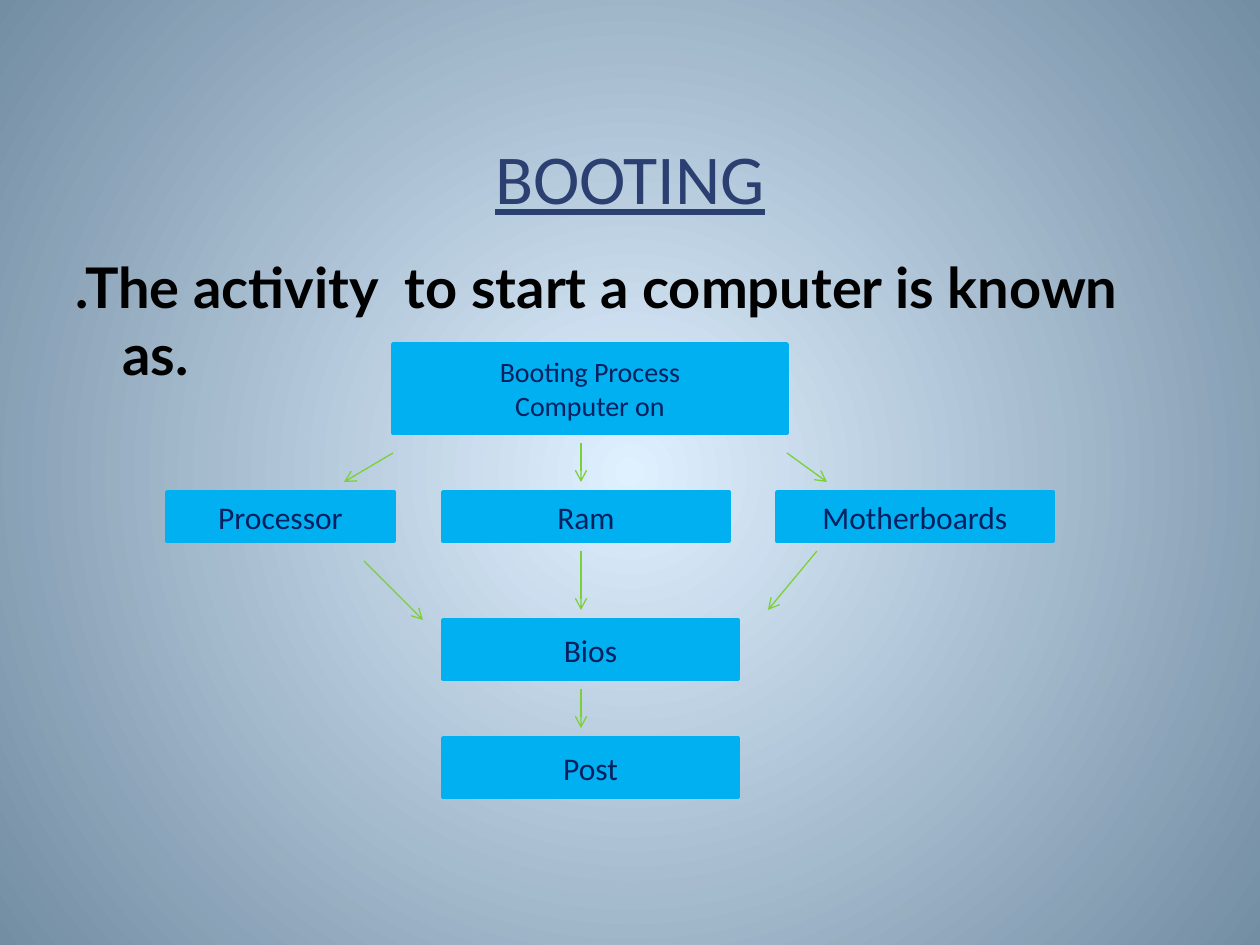
from lxml.etree import SubElement
from pptx import Presentation
from pptx.dml.color import RGBColor
from pptx.enum.shapes import MSO_CONNECTOR, MSO_SHAPE
from pptx.enum.text import MSO_ANCHOR, PP_ALIGN
from pptx.oxml import parse_xml
from pptx.oxml.ns import nsdecls, qn
from pptx.util import Emu, Pt

EMU_PER_PX = 914400 / 126
BOX_FILL = "00B0F0"
BOX_TEXT = "002060"
ARROW = "7CD036"
CENTER_X = 581


def px(length):
    return Emu(round(length * EMU_PER_PX))


def color(hex_string):
    return RGBColor.from_string(hex_string)


def place(shape, left, top, width, height):
    shape.left, shape.top = px(left), px(top)
    shape.width, shape.height = px(width), px(height)


def style(para, name, size, hex_string):
    para.font.name = name
    para.font.size = Pt(size)
    para.font.color.rgb = color(hex_string)


def set_background(page, inner, outer):
    page.background.fill.solid()
    properties = page.background._cSld.bg.bgPr
    gradient = parse_xml(
        f'<a:gradFill {nsdecls("a")} rotWithShape="1"><a:gsLst>'
        f'<a:gs pos="0"><a:srgbClr val="{inner}"/></a:gs>'
        f'<a:gs pos="100000"><a:srgbClr val="{outer}"/></a:gs></a:gsLst>'
        '<a:path path="circle">'
        '<a:fillToRect l="50000" t="50000" r="50000" b="50000"/>'
        '</a:path></a:gradFill>'
    )
    properties.replace(properties.find(qn("a:solidFill")), gradient)


def set_title(page, text):
    title = page.shapes.title
    place(title, 63, 108, 1134, 138)
    title.text_frame.vertical_anchor = MSO_ANCHOR.MIDDLE
    para = title.text_frame.paragraphs[0]
    para.text = text
    para.alignment = PP_ALIGN.CENTER
    style(para, "Calibri", 40, "2C3F71")
    para.font.underline = True


def set_body(page, text):
    body = page.placeholders[1]
    place(body, 63, 246, 1134, 598)
    para = body.text_frame.paragraphs[0]
    para.text = text
    style(para, "Lato", 32, "000000")
    para.font.bold = True
    properties = para._p.get_or_add_pPr()
    properties.set("marL", str(px(47)))
    properties.set("indent", str(-px(47)))
    properties.insert(0, parse_xml(f'<a:buNone {nsdecls("a")}/>'))


def add_box(page, lines, left, top, width, height, size=18):
    box = page.shapes.add_shape(
        MSO_SHAPE.RECTANGLE, px(left), px(top), px(width), px(height))
    box.shadow.inherit = False
    box.fill.solid()
    box.fill.fore_color.rgb = color(BOX_FILL)
    box.line.color.rgb = color(BOX_FILL)
    box.line.width = Pt(2)
    frame = box.text_frame
    frame.vertical_anchor = MSO_ANCHOR.MIDDLE
    frame.text = "\n".join(lines)
    for para in frame.paragraphs:
        para.alignment = PP_ALIGN.CENTER
        style(para, "Calibri", size, BOX_TEXT)


def add_arrow(page, start_x, start_y, end_x, end_y):
    arrow = page.shapes.add_connector(
        MSO_CONNECTOR.STRAIGHT, px(start_x), px(start_y), px(end_x), px(end_y))
    arrow.line.color.rgb = color(ARROW)
    arrow.line.width = Pt(0.75)
    SubElement(arrow.line._get_or_add_ln(), qn("a:tailEnd"), type="arrow")
    SubElement(arrow._element.spPr, qn("a:effectLst"))


def main():
    deck = Presentation()
    deck.slide_width, deck.slide_height = px(1260), px(945)
    page = deck.slides.add_slide(deck.slide_layouts[1])
    set_background(page, "DFF0FF", "738DA3")
    set_title(page, "BOOTING")
    set_body(page, ".The activity  to start a computer is known as.")

    add_box(page, ["Booting Process", "Computer on"], 393, 344, 394, 89, size=16)
    for part, left, width in (
        ("Processor", 167, 227), ("Ram", 443, 286), ("Motherboards", 777, 276),
    ):
        add_box(page, [part], left, 492, width, 49)
    for stage, top in (("Bios", 620), ("Post", 738)):
        add_box(page, [stage], 443, top, 295, 59)

    for start_y, end_y in ((443, 482), (551, 610), (689, 728)):
        add_arrow(page, CENTER_X, start_y, CENTER_X, end_y)
    for ends in (
        (787, 453, 827, 482), (393, 453, 344, 482),
        (364, 561, 423, 620), (817, 551, 768, 610),
    ):
        add_arrow(page, *ends)

    deck.save("out.pptx")


if __name__ == "__main__":
    main()
